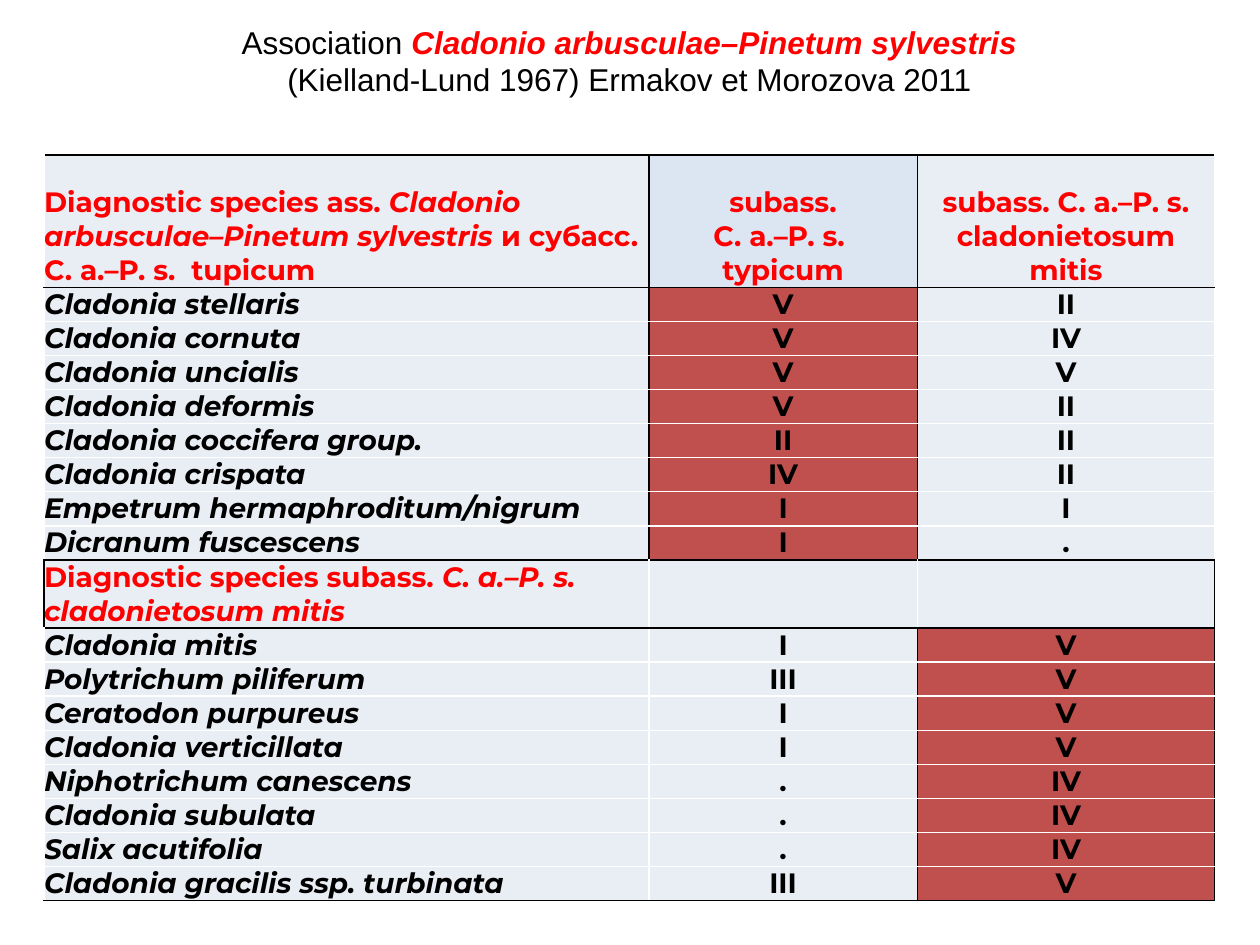
from lxml.etree import SubElement
from pptx import Presentation
from pptx.dml.color import RGBColor
from pptx.enum.text import MSO_ANCHOR, PP_ALIGN
from pptx.oxml.ns import qn
from pptx.util import Inches, Pt

RED, BLACK, WHITE = "FF0000", "000000", "FFFFFF"
PALE, BLUE, BRICK = "E9EDF4", "DCE6F2", "C0504D"

# Content: runs are (text, italic)
TITLE = [("Association ", BLACK, False),
         ("Cladonio arbusculae–Pinetum sylvestris", RED, True),
         ("\n(Kielland-Lund 1967) Ermakov et Morozova 2011", BLACK, False)]
HEAD = [
    [("Diagnostic species ass. ", False),
     ("Cladonio arbusculae–Pinetum sylvestris ", True),
     ("и субасс. C. a.–P. s.  tupicum", False)],
    [("subass.\nC. a.–P. s.  typicum", False)],
    [("subass. C. a.–P. s. cladonietosum mitis", False)],
]
TYPICUM = [
    ("Cladonia stellaris", "V", "II"),
    ("Cladonia cornuta", "V", "IV"),
    ("Cladonia uncialis", "V", "V"),
    ("Cladonia deformis", "V", "II"),
    ("Cladonia coccifera group.", "II", "II"),
    ("Cladonia crispata", "IV", "II"),
    ("Empetrum hermaphroditum/nigrum", "I", "I"),
    ("Dicranum fuscescens", "I", "."),
]
DIVIDER = [[("Diagnostic species subass. ", False),
            ("C. a.–P. s. cladonietosum mitis", True)], [], []]
MITIS = [
    ("Cladonia mitis", "I", "V"),
    ("Polytrichum piliferum", "III", "V"),
    ("Ceratodon purpureus", "I", "V"),
    ("Cladonia verticillata", "I", "V"),
    ("Niphotrichum canescens", ".", "IV"),
    ("Cladonia subulata", ".", "IV"),
    ("Salix acutifolia", ".", "IV"),
    ("Cladonia gracilis ssp. turbinata", "III", "V"),
]


def species(names):
    return [[[(text, col == 0)] for col, text in enumerate(row)] for row in names]


# Bands: rows, height, text colour, cell fills, colours of the four upright rules
BANDS = [
    ([HEAD], 1.05, RED, (PALE, BLUE, PALE), (WHITE, BLACK, BLACK, WHITE)),
    (species(TYPICUM), 0.27, BLACK, (PALE, BRICK, PALE), (WHITE, BLACK, BLACK, WHITE)),
    ([DIVIDER], 0.53, RED, (PALE, PALE, PALE), (BLACK, WHITE, WHITE, BLACK)),
    (species(MITIS), 0.27, BLACK, (PALE, PALE, BRICK), (WHITE, WHITE, BLACK, BLACK)),
]
WIDTHS = [4.8, 2.13, 2.36]


def rgb(code):
    return RGBColor.from_string(code)


def add_run(para, text):
    """Add text as one run, with a line break for each newline."""
    runs = []
    for num, part in enumerate(text.split("\n")):
        if num:
            para.add_line_break()
        if part:
            run = para.add_run()
            run.text = part
            runs.append(run)
    return runs


def set_rules(cell, colors):
    """Draw 1 pt cell borders: left, right, top, bottom."""
    props = cell._tc.get_or_add_tcPr()
    for side, color in zip("LRTB", colors):
        line = SubElement(props, qn(f"a:ln{side}"), w=str(Pt(1)))
        fill = SubElement(line, qn("a:solidFill"))
        SubElement(fill, qn("a:srgbClr"), val=color)


def fill_cell(cell, runs, color, fill, rules, align):
    set_rules(cell, rules)
    cell.fill.solid()
    cell.fill.fore_color.rgb = rgb(fill)
    cell.margin_left = cell.margin_right = cell.margin_top = cell.margin_bottom = 0
    cell.vertical_anchor = MSO_ANCHOR.BOTTOM
    para = cell.text_frame.paragraphs[0]
    para.alignment = align
    font = para.font
    font.name, font.size, font.bold = "Montserrat", Pt(16), True
    font.color.rgb = rgb(color)
    for text, italic in runs:
        for run in add_run(para, text):
            run.font.italic = italic


prs = Presentation()
prs.slide_width, prs.slide_height = Inches(10), Inches(7.5)
slide = prs.slides.add_slide(prs.slide_layouts[6])

# Species table
count = sum(len(band[0]) for band in BANDS)
table = slide.shapes.add_table(count, 3, Inches(0.35), Inches(1.23),
                               Inches(9.29), Inches(5.9)).table
table.first_row = table.horz_banding = False
for col, width in zip(table.columns, WIDTHS):
    col.width = Inches(width)

top = 0
for rows, height, color, fills, rules in BANDS:
    for num, row in enumerate(rows):
        table.rows[top + num].height = Inches(height)
        upper = BLACK if num == 0 else WHITE
        lower = BLACK if num == len(rows) - 1 else WHITE
        for col, runs in enumerate(row):
            edges = (rules[col], rules[col + 1], upper, lower)
            align = PP_ALIGN.CENTER if col else PP_ALIGN.LEFT
            fill_cell(table.cell(top + num, col), runs, color, fills[col], edges, align)
    top += len(rows)

# Title
box = slide.shapes.add_textbox(Inches(0.43), Inches(0.13), Inches(9.13), Inches(1.01))
box.text_frame.word_wrap = True
para = box.text_frame.paragraphs[0]
para.alignment = PP_ALIGN.CENTER
para.font.name, para.font.size = "Arial", Pt(18)
for text, color, strong in TITLE:
    for run in add_run(para, text):
        run.font.color.rgb = rgb(color)
        run.font.bold = run.font.italic = strong

prs.save("out.pptx")
